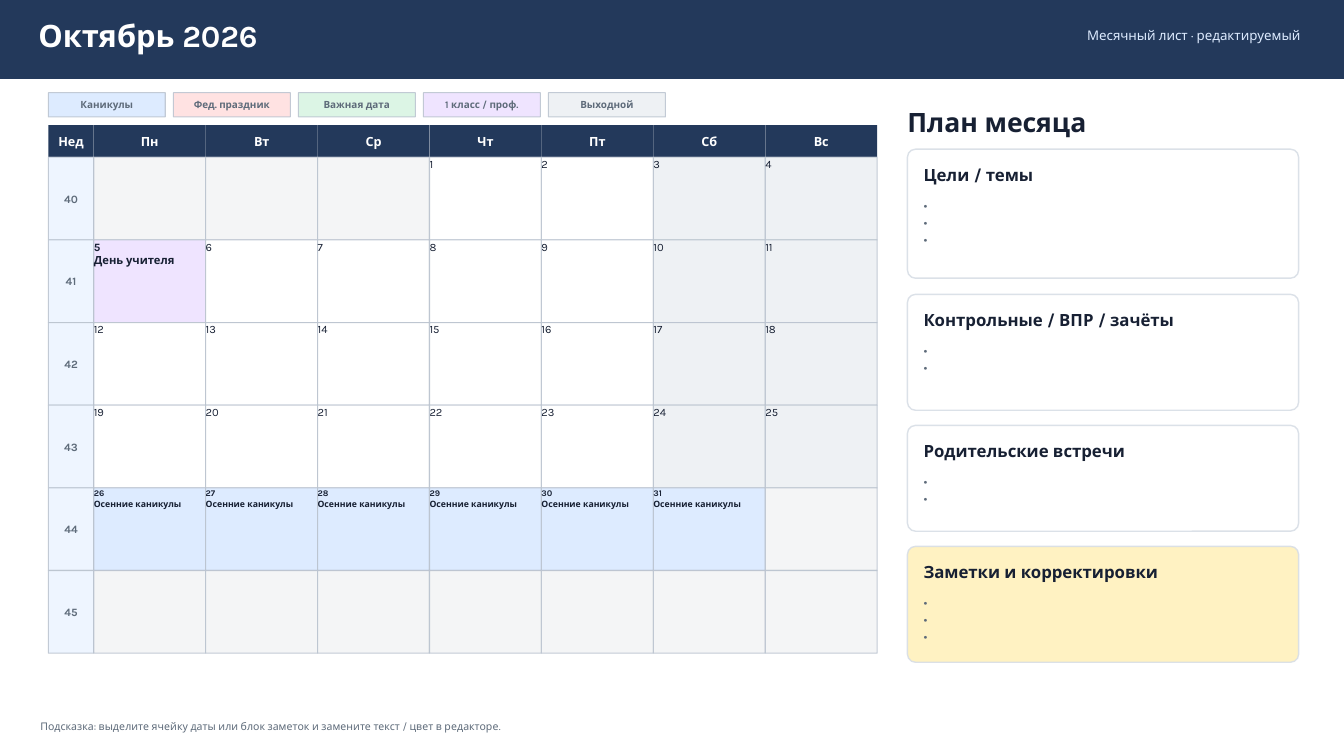
from dataclasses import dataclass

from lxml.etree import SubElement
from pptx import Presentation
from pptx.dml.color import RGBColor
from pptx.enum.shapes import MSO_SHAPE
from pptx.enum.text import MSO_ANCHOR, PP_ALIGN
from pptx.oxml.ns import qn
from pptx.util import Inches, Pt


@dataclass(frozen=True)
class Theme:
    font: str = "Karla"
    navy: str = "23395B"
    white: str = "FFFFFF"
    ink: str = "172033"
    muted: str = "5E6B7A"
    holiday: str = "DDEBFF"
    federal: str = "FFE2E2"
    important: str = "DCF5E5"
    professional: str = "EFE4FF"
    weekend: str = "EEF1F4"
    outside: str = "F4F5F6"
    week: str = "EEF5FF"
    notes: str = "FFF2C2"
    grid: str = "BAC3CF"
    card_line: str = "D8DEE6"
    title_size: float = 22
    plan_size: float = 19
    card_size: float = 12
    bullet_size: float = 10
    subtitle_size: float = 9.5
    header_size: float = 9
    day_size: float = 8
    hint_size: float = 7.5
    legend_size: float = 7.1
    holiday_size: float = 6.2


theme = Theme()


def write_text(shape, lines, size, color, bold=False, align=PP_ALIGN.LEFT, anchor=MSO_ANCHOR.MIDDLE):
    frame = shape.text_frame
    frame.word_wrap = True
    frame.vertical_anchor = anchor
    frame.margin_left = frame.margin_right = frame.margin_top = frame.margin_bottom = 0
    for index, line in enumerate(lines):
        paragraph = frame.paragraphs[0] if index == 0 else frame.add_paragraph()
        paragraph.alignment = align
        run = paragraph.add_run()
        run.text = line
        run.font.name = theme.font
        run.font.size = Pt(size)
        run.font.bold = bold
        run.font.color.rgb = RGBColor.from_string(color)


def add_box(kind, left, top, width, height, fill, line=None, line_width=0.75, opacity=85):
    shape = slide.shapes.add_shape(kind, Inches(left), Inches(top), Inches(width), Inches(height))
    shape.shadow.inherit = False
    shape.fill.solid()
    shape.fill.fore_color.rgb = RGBColor.from_string(fill)
    if line is None:
        shape.line.fill.background()
        return shape
    shape.line.color.rgb = RGBColor.from_string(line)
    shape.line.width = Pt(line_width)
    if opacity < 100:
        line_color = shape.line.fill._xPr.find(".//" + qn("a:srgbClr"))
        SubElement(line_color, qn("a:alpha"), val=str(opacity * 1000))
    return shape


presentation = Presentation()
presentation.slide_width = Inches(13.33)
presentation.slide_height = Inches(7.5)
slide = presentation.slides.add_slide(presentation.slide_layouts[6])

add_box(MSO_SHAPE.RECTANGLE, 0, 0, 13.33, 0.78, theme.navy, theme.navy, 1, 100)

labels = [
    (0.38, 0.16, 8.8, 0.38, "Октябрь 2026", theme.title_size, theme.white, True, PP_ALIGN.LEFT),
    (9.6, 0.2, 3.3, 0.3, "Месячный лист · редактируемый", theme.subtitle_size, theme.holiday, False, PP_ALIGN.RIGHT),
    (9, 1.06, 3.75, 0.3, "План месяца", theme.plan_size, theme.ink, True, PP_ALIGN.LEFT),
    (0.4, 7.12, 12.55, 0.18,
     "Подсказка: выделите ячейку даты или блок заметок и замените текст / цвет в редакторе.",
     theme.hint_size, theme.muted, False, PP_ALIGN.LEFT),
]
for left, top, width, height, text, size, color, bold, align in labels:
    label = slide.shapes.add_textbox(Inches(left), Inches(top), Inches(width), Inches(height))
    write_text(label, [text], size, color, bold, align)

legend = [
    ("Каникулы", theme.holiday),
    ("Фед. праздник", theme.federal),
    ("Важная дата", theme.important),
    ("1 класс / проф.", theme.professional),
    ("Выходной", theme.weekend),
]
for index, (text, fill) in enumerate(legend):
    chip = add_box(MSO_SHAPE.RECTANGLE, 0.48 + index * 1.24, 0.92, 1.16, 0.24, fill, theme.grid)
    write_text(chip, [text], theme.legend_size, theme.muted, True, PP_ALIGN.CENTER)

headings = ["Нед", "Пн", "Вт", "Ср", "Чт", "Пт", "Сб", "Вс"]
first_week, week_count, first_weekday, month_days = 40, 6, 4, 31
calendar_left, calendar_top = 0.48, 1.24
week_width, day_width, header_height, day_height = 0.45, 1.11, 0.32, 0.82
events = {5: ("День учителя", theme.professional, theme.day_size)}
for day in range(26, month_days + 1):
    events[day] = ("Осенние каникулы", theme.holiday, theme.holiday_size)

for row in range(week_count + 1):
    top = calendar_top + (header_height + (row - 1) * day_height if row else 0)
    height = day_height if row else header_height
    for column, heading in enumerate(headings):
        left = calendar_left + (week_width + (column - 1) * day_width if column else 0)
        width = day_width if column else week_width
        day = (row - 1) * 7 + column - first_weekday + 1
        lines, size, color, bold = [], theme.day_size, theme.ink, False
        align, anchor = PP_ALIGN.LEFT, MSO_ANCHOR.TOP
        if row == 0:
            fill, lines, size, color = theme.navy, [heading], theme.header_size, theme.white
        elif column == 0:
            fill, lines, color = theme.week, [str(first_week + row - 1)], theme.muted
        elif not 1 <= day <= month_days:
            fill = theme.outside
        elif day in events:
            event, fill, size = events[day]
            lines, bold = [str(day), event], True
        else:
            fill = theme.weekend if column > 5 else theme.white
            lines = [str(day)]
        if row == 0 or column == 0:
            bold, align, anchor = True, PP_ALIGN.CENTER, MSO_ANCHOR.MIDDLE
        line = theme.grid if row else None
        cell = add_box(MSO_SHAPE.RECTANGLE, left, top, width, height, fill, line)
        write_text(cell, lines, size, color, bold, align, anchor)

cards = [
    ("Цели / темы", 1.48, 1.28, 3, theme.white),
    ("Контрольные / ВПР / зачёты", 2.92, 1.15, 2, theme.white),
    ("Родительские встречи", 4.22, 1.05, 2, theme.white),
    ("Заметки и корректировки", 5.42, 1.15, 3, theme.notes),
]
for title, top, height, bullet_count, fill in cards:
    card = add_box(MSO_SHAPE.ROUNDED_RECTANGLE, 9, top, 3.88, height, fill, theme.card_line, 1, 90)
    card.adjustments[0] = 0.08 / height
    card_title = slide.shapes.add_textbox(Inches(9.16), Inches(top + 0.12), Inches(3.56), Inches(0.26))
    write_text(card_title, [title], theme.card_size, theme.ink, True)
    card_body = slide.shapes.add_textbox(Inches(9.16), Inches(top + 0.47), Inches(3.56), Inches(height - 0.56))
    write_text(card_body, ["•"] * bullet_count, theme.bullet_size, theme.muted, anchor=MSO_ANCHOR.TOP)

presentation.save("out.pptx")
